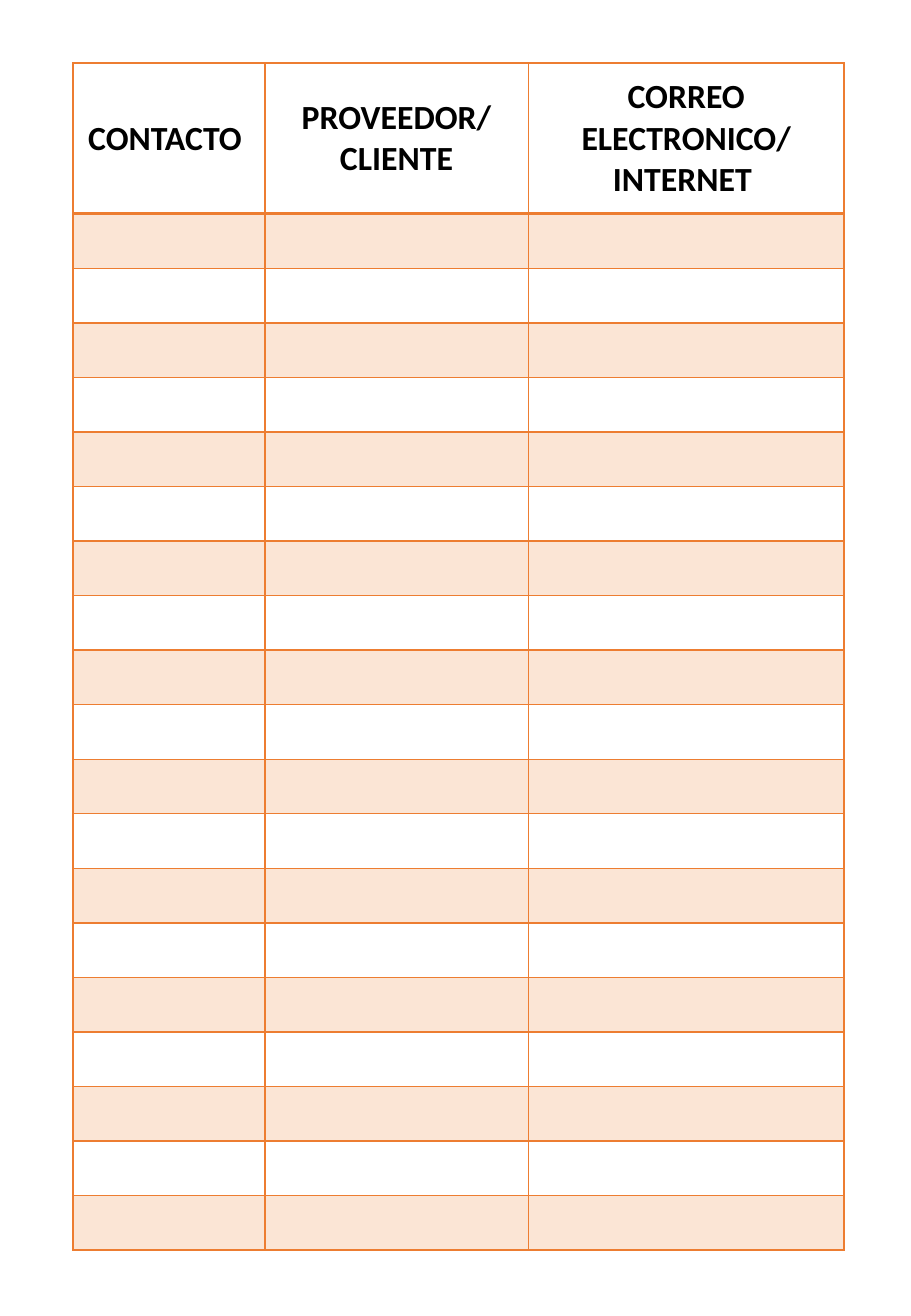
from lxml import etree
from pptx import Presentation
from pptx.dml.color import RGBColor
from pptx.enum.text import MSO_ANCHOR, PP_ALIGN
from pptx.oxml.ns import qn
from pptx.util import Inches, Pt

# Content
HEADERS = ["CONTACTO ", "PROVEEDOR/\nCLIENTE", "CORREO ELECTRONICO/\nINTERNET "]
COL_WIDTHS = [1.58, 2.17, 2.6]
ENTRY_ROWS = 19
LEFT, TOP, HEIGHT = 0.6, 0.52, 9.77
HEADER_HEIGHT = 1.24

ORANGE = RGBColor(0xED, 0x7D, 0x31)
BLACK = RGBColor(0, 0, 0)


def write_text(tf, text, size=20, bold=True, color=BLACK, align=PP_ALIGN.CENTER):
    tf.text = text
    for p in tf.paragraphs:
        p.alignment = align
        for r in p.runs:
            r.font.name = "Calibri"
            r.font.size = Pt(size)
            r.font.bold = bold
            r.font.color.rgb = color


def set_borders(cell, **widths):
    """Draw the four sides; they must come before the cell fill."""
    tc_pr = cell._tc.get_or_add_tcPr()
    for i, side in enumerate("LRTB"):
        ln = etree.Element(qn(f"a:ln{side}"), w=str(Pt(widths.get(side, 1))))
        fill = etree.SubElement(ln, qn("a:solidFill"))
        etree.SubElement(fill, qn("a:srgbClr"), val=str(ORANGE))
        tc_pr.insert(i, ln)


def tint(cell, percent):
    cell.fill.solid()
    cell.fill.fore_color.rgb = ORANGE
    color = cell._tc.tcPr.find(qn("a:solidFill")).find(qn("a:srgbClr"))
    etree.SubElement(color, qn("a:alpha"), val=str(percent * 1000))


prs = Presentation()
prs.slide_width, prs.slide_height = Inches(7.5), Inches(10.83)
s = prs.slides.add_slide(prs.slide_layouts[6])

# Table grid
table = s.shapes.add_table(ENTRY_ROWS + 1, len(HEADERS), Inches(LEFT), Inches(TOP),
                           Inches(sum(COL_WIDTHS)), Inches(HEIGHT)).table
table.first_row = table.horz_banding = False
for column, width in zip(table.columns, COL_WIDTHS):
    column.width = Inches(width)
for i, row in enumerate(table.rows):
    row.height = Inches((HEIGHT - HEADER_HEIGHT) / ENTRY_ROWS if i else HEADER_HEIGHT)

# Header row
for cell, header in zip(table.rows[0].cells, HEADERS):
    write_text(cell.text_frame, header)
    cell.vertical_anchor = MSO_ANCHOR.MIDDLE
    cell.margin_left = cell.margin_right = Inches(0.12)
    cell.margin_top = cell.margin_bottom = Inches(0.06)

# Bands and borders, with a heavier rule under the header
for i, row in enumerate(table.rows):
    for cell in row.cells:
        if i % 2:
            tint(cell, 20)
        else:
            cell.fill.background()
        set_borders(cell, T=2 if i == 1 else 1, B=2 if i == 0 else 1)

prs.save("out.pptx")
